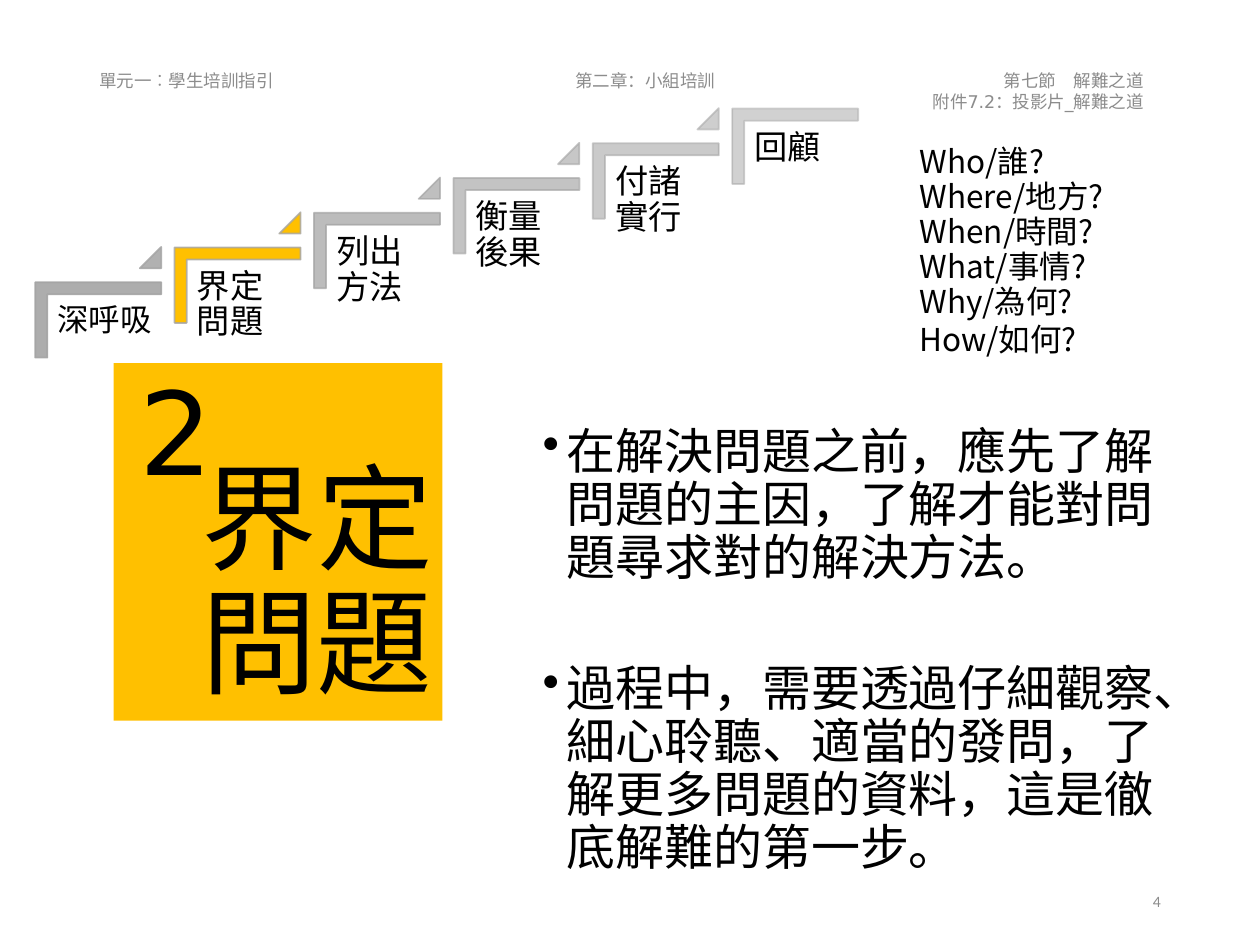
"""Build the problem-solving slide on defining the problem."""
from dataclasses import dataclass

from lxml.etree import SubElement
from pptx import Presentation
from pptx.dml.color import RGBColor
from pptx.enum.shapes import MSO_SHAPE
from pptx.enum.text import MSO_ANCHOR, PP_ALIGN
from pptx.oxml.ns import qn
from pptx.util import Cm, Pt


@dataclass(frozen=True)
class Theme:
    text: RGBColor = RGBColor(0x00, 0x00, 0x00)
    muted: RGBColor = RGBColor(0x8C, 0x8C, 0x8C)
    step: RGBColor = RGBColor(0xA5, 0xA5, 0xA5)
    accent: RGBColor = RGBColor(0xFF, 0xC0, 0x00)
    font: str = "Calibri"
    header_font: str = "DejaVu Sans"
    question_font: str = "Noto Sans CJK SC"
    page: int = 9
    header: int = 10
    question: int = 18
    label: int = 19
    body: int = 28
    title: int = 66


class SlideBuilder:
    def __init__(self, slide, theme):
        self.slide = slide
        self.theme = theme

    def frame(self, sp, inset=None, anchor=MSO_ANCHOR.TOP):
        tf = sp.text_frame
        tf.word_wrap = True
        tf.vertical_anchor = anchor
        if inset is not None:
            tf.margin_left = tf.margin_right = Cm(inset)
            tf.margin_top = tf.margin_bottom = Cm(inset)
        return tf

    def paragraph(self, tf, size, font=None, color=None, align=PP_ALIGN.LEFT, spacing=None):
        p = tf.paragraphs[0]
        if p.runs:
            p = tf.add_paragraph()
        p.alignment = align
        p.line_spacing = spacing
        p.font.size = Pt(size)
        p.font.name = font or self.theme.font
        p.font.color.rgb = color or self.theme.text
        return p

    def text(self, box, lines, size, inset=None, anchor=MSO_ANCHOR.TOP, **style):
        sp = self.slide.shapes.add_textbox(*map(Cm, box))
        tf = self.frame(sp, inset, anchor)
        for line in lines:
            self.paragraph(tf, size, **style).add_run().text = line

    def shape(self, kind, box, fill, line=None, alphas=(100, 100)):
        sp = self.slide.shapes.add_shape(kind, *map(Cm, box))
        sp.shadow.inherit = False
        sp.fill.solid()
        sp.fill.fore_color.rgb = fill
        if line is None:
            sp.line.fill.background()
        else:
            sp.line.color.rgb = line
            sp.line.width = Pt(1)
        colors = list(sp._element.spPr.iter(qn("a:srgbClr")))
        for color, alpha in zip(colors, alphas):
            SubElement(color, qn("a:alpha")).set("val", str(alpha * 1000))
        return sp

    def step(self, index, label, active, last):
        t = self.theme
        dx, dy = 2.81 * index, -0.7 * index
        alpha = 90 - 8 * index
        fill = t.accent if active else t.step

        def part(kind, box, strength):
            alphas = (100 if active else strength, strength)
            return self.shape(kind, box, fill, t.step, alphas)

        corner = part(MSO_SHAPE.CORNER, (1.22 + dx, 5.18 + dy, 1.52, 2.54), alpha)
        corner.rotation = 90
        corner.adjustments[0] = corner.adjustments[1] = 0.16
        size = t.label if index else t.question
        self.text((0.97 + dx, 5.94 + dy, 2.29, 2.01), [label], size, inset=0.19, spacing=0.9)
        if not last:
            triangle = part(MSO_SHAPE.ISOSCELES_TRIANGLE,
                            (2.82 + dx, 4.98 + dy, 0.43, 0.43), alpha - 4)
            triangle.adjustments[0] = 1

    def title_card(self, box, title):
        sp = self.shape(MSO_SHAPE.RECTANGLE, box, self.theme.accent)
        tf = self.frame(sp, 0.2, MSO_ANCHOR.BOTTOM)
        p = self.paragraph(tf, self.theme.title, align=PP_ALIGN.RIGHT, spacing=0.9)
        p.add_run().text = title

    def bullets(self, box, items):
        tf = self.frame(self.slide.shapes.add_textbox(*map(Cm, box)))
        for item, gap in items:
            p = self.paragraph(tf, self.theme.body, spacing=0.9)
            p.space_before = Pt(gap)
            p.add_run().text = item
            pPr = p._p.get_or_add_pPr()
            pPr.set("marL", str(Cm(0.48)))
            pPr.set("indent", str(-Cm(0.48)))
            bullet = pPr.makeelement(qn("a:buChar"), {"char": "•"})
            pPr.find(qn("a:defRPr")).addprevious(bullet)

    def questions(self, box, rows):
        t = self.theme
        tf = self.frame(self.slide.shapes.add_textbox(*map(Cm, box)))
        for english, chinese, font, spacing in rows:
            p = self.paragraph(tf, t.question, spacing=spacing)
            for text, name in ((english + "/", t.question_font), (chinese, font),
                               ("?", t.question_font)):
                r = p.add_run()
                r.text = text
                r.font.name = name


def main():
    prs = Presentation()
    prs.slide_width, prs.slide_height = Cm(25.4), Cm(19.05)
    t = Theme()
    s = SlideBuilder(prs.slides.add_slide(prs.slide_layouts[6]), t)

    headers = [
        (1.75, 1.12, PP_ALIGN.LEFT, ["單元一︰學生培訓指引"]),
        (8.71, 1.12, PP_ALIGN.CENTER, ["第二章：小組培訓"]),
        (14.71, 1.32, PP_ALIGN.RIGHT, ["第七節　解難之道", "附件7.2：投影片_解難之道"]),
    ]
    for left, top, align, lines in headers:
        s.text((left, top, 8.59, 1.02), lines, t.header, anchor=MSO_ANCHOR.MIDDLE,
               font=t.header_font, color=t.muted, align=align)

    s.bullets((10.69, 8.48, 13.21, 12.09), [
        ("在解決問題之前，應先了解問題的主因，了解才能對問題尋求對的解決方法。", 7.5),
        ("過程中，需要透過仔細觀察、細心聆聽、適當的發問，了解更多問題的資料，這是徹底解難的第一步。", 45),
    ])

    steps = ["深呼吸", "界定問題", "列出方法", "衡量後果", "付諸實行", "回顧"]
    for i, label in enumerate(steps):
        s.step(i, label, active=i == 1, last=i == len(steps) - 1)

    s.title_card((2.29, 7.32, 6.63, 7.21), steps[1])
    s.text((2.57, 7.14, 2.79, 3.07), ["2"], t.title, font=t.header_font)

    s.questions((18.29, 2.79, 12.7, 4.6), [
        ("Who", "誰", t.font, Pt(20)),
        ("Where", "地方", t.font, Pt(20)),
        ("When", "時間", t.font, Pt(20)),
        ("What", "事情", t.font, Pt(20)),
        ("Why", "為何", t.font, Pt(20)),
        ("How", "如何", t.header_font, None),
    ])
    s.text((17.93, 17.65, 5.72, 1.02), ["4"], t.page, anchor=MSO_ANCHOR.MIDDLE,
           color=t.muted, align=PP_ALIGN.RIGHT)
    prs.save("out.pptx")


if __name__ == "__main__":
    main()
